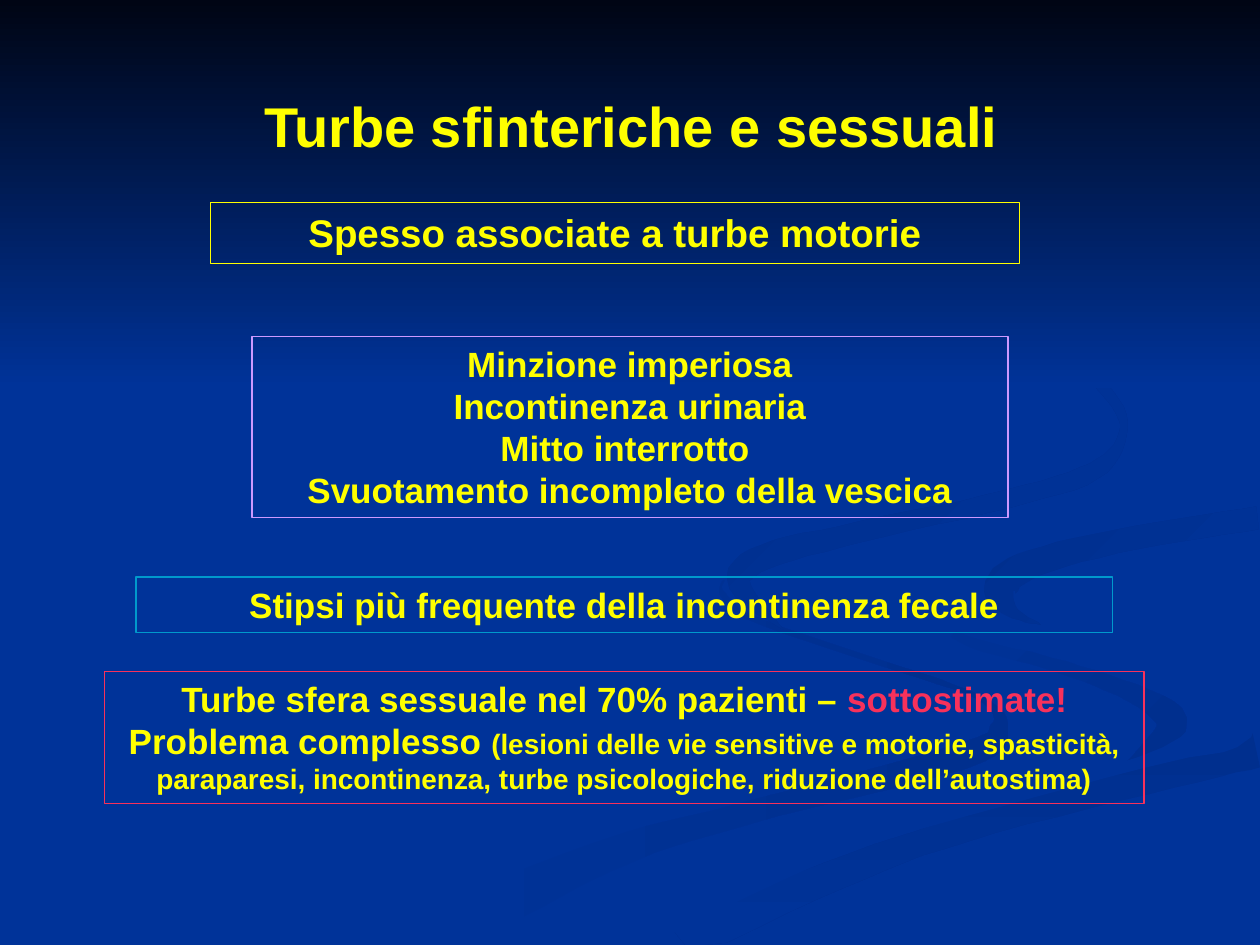
import dataclasses
import math

import pptx
import pptx.dml.color
import pptx.enum.shapes
import pptx.enum.text
import pptx.util

PX = pptx.util.Inches(1) // 100
SLIDE_BOX = (0, 0, 1000, 750)
SKY_HEIGHT = 308
STEPS_PER_KNOT = 6


@dataclasses.dataclass(frozen=True)
class Theme:
    font: str = "Arial"
    blue: str = "003399"
    shade: str = "002F8E"
    night: str = "000514"
    text: str = "FFFF00"
    violet: str = "CC99FF"
    cyan: str = "0099CC"
    red: str = "F7315B"
    title_size: int = 32
    lead_size: int = 22
    body_size: int = 20
    detail_size: int = 16
    line_width: float = 0.75


@dataclasses.dataclass(frozen=True)
class Ribbon:
    start_color: str
    end_color: str
    angle: int
    knots: tuple  # (x, y, thickness) along the centre line


THEME = Theme()

RIBBONS = {
    "left tail": Ribbon(THEME.blue, THEME.shade, 0, (
        (575, 460, 0), (574, 472, 4), (605, 494, 4), (745, 541, 4), (784, 558, 4),
        (793, 578, 14), (764, 600, 20), (587, 647, 18), (479, 680, 26), (330, 749, 45))),
    "right curl": Ribbon(THEME.blue, THEME.shade, 45, (
        (724, 464, 0), (731, 482, 6), (770, 508, 10), (845, 530, 10),
        (907, 554, 16), (930, 577, 24), (894, 605, 0))),
    "lower stroke": Ribbon(THEME.shade, THEME.blue, 90, (
        (998, 595, 28), (910, 619, 22), (765, 658, 20), (664, 694, 24), (537, 749, 34))),
    "main stroke": Ribbon(THEME.blue, THEME.blue, 0, (
        (999, 395, 15), (874, 414, 18), (775, 438, 30), (753, 464, 56), (790, 494, 34),
        (859, 516, 18), (935, 541, 28), (971, 568, 56), (925, 599, 12), (765, 643, 10),
        (652, 678, 12), (490, 749, 26))),
    "right band": Ribbon(THEME.shade, THEME.blue, 45, (
        (998, 411, 18), (900, 427, 18), (820, 447, 22), (794, 466, 26),
        (803, 485, 10), (826, 496, 0))),
    "upper curl": Ribbon(THEME.shade, THEME.blue, 45, (
        (762, 233, 0), (821, 263, 4), (880, 313, 8), (891, 345, 6), (868, 374, 14),
        (800, 396, 14), (683, 422, 16), (607, 442, 20), (587, 464, 18), (622, 500, 0))),
}


def rgb(value):
    return pptx.dml.color.RGBColor.from_string(value)


def spline_value(before, start, end, after, t):
    return 0.5 * (2 * start + (end - before) * t
                  + (2 * before - 5 * start + 4 * end - after) * t ** 2
                  + (3 * start - before - 3 * end + after) * t ** 3)


def smooth(knots):
    padded = (knots[0], *knots, knots[-1])
    samples = []
    for neighbours in zip(padded, padded[1:], padded[2:], padded[3:]):
        for step in range(STEPS_PER_KNOT):
            t = step / STEPS_PER_KNOT
            samples.append(tuple(spline_value(*values, t) for values in zip(*neighbours)))
    return samples + [knots[-1]]


def ribbon_outline(knots, width, height):
    samples = smooth(knots)
    one_edge, other_edge = [], []
    for index, (x, y, thickness) in enumerate(samples):
        previous = samples[max(index - 1, 0)]
        following = samples[min(index + 1, len(samples) - 1)]
        direction = math.atan2(following[1] - previous[1], following[0] - previous[0])
        across = max(thickness, 0) / 2
        for edge, side in ((one_edge, across), (other_edge, -across)):
            edge.append((min(round(x - side * math.sin(direction)), width),
                         min(round(y + side * math.cos(direction)), height)))
    return one_edge + other_edge[::-1]


def paint(fill, start, end, clockwise_angle):
    if start == end:
        fill.solid()
        fill.fore_color.rgb = rgb(start)
        return
    fill.gradient()
    fill.gradient_angle = (360 - clockwise_angle) % 360
    for stop, color, position in zip(fill.gradient_stops, (start, end), (0, 1)):
        stop.color.rgb = rgb(color)
        stop.position = position


def add_outline(slide, box, points, start, end, angle):
    builder = slide.shapes.build_freeform(*points[0], scale=PX)
    builder.add_line_segments(points[1:], close=True)
    shape = builder.convert_to_shape(box[0] * PX, box[1] * PX)
    shape.shadow.inherit = False
    shape.line.fill.background()
    paint(shape.fill, start, end, angle)


def add_backdrop(slide, box):
    width, height = box[2:]
    slide.background.fill.solid()
    slide.background.fill.fore_color.rgb = rgb(THEME.blue)
    for ribbon in RIBBONS.values():
        add_outline(slide, box, ribbon_outline(ribbon.knots, width, height),
                    ribbon.start_color, ribbon.end_color, ribbon.angle)
    sky = [(0, 0), (0, SKY_HEIGHT), (width, SKY_HEIGHT), (width, 0)]
    add_outline(slide, box, sky, THEME.night, THEME.blue, 90)


def write_text(shape, paragraphs):
    frame = shape.text_frame
    frame.word_wrap = True
    frame.vertical_anchor = pptx.enum.text.MSO_ANCHOR.TOP
    frame.auto_size = pptx.enum.text.MSO_AUTO_SIZE.SHAPE_TO_FIT_TEXT
    for index, runs in enumerate(paragraphs):
        paragraph = frame.add_paragraph() if index else frame.paragraphs[0]
        paragraph.alignment = pptx.enum.text.PP_ALIGN.CENTER
        for text, size, color in runs:
            run = paragraph.add_run()
            run.text = text
            run.font.name = THEME.font
            run.font.size = pptx.util.Pt(size)
            run.font.bold = True
            run.font.color.rgb = rgb(color)


def add_title(slide, box, text):
    shape = slide.shapes.add_textbox(*(PX * length for length in box))
    write_text(shape, [[(text, THEME.title_size, THEME.text)]])


def add_framed_text(slide, box, line_color, paragraphs):
    rectangle = pptx.enum.shapes.MSO_SHAPE.RECTANGLE
    shape = slide.shapes.add_shape(rectangle, *(PX * length for length in box))
    shape.shadow.inherit = False
    shape.fill.background()
    shape.line.color.rgb = rgb(line_color)
    shape.line.width = pptx.util.Pt(THEME.line_width)
    write_text(shape, paragraphs)


def styled(text, size=THEME.body_size, color=THEME.text):
    return text, size, color


def main():
    presentation = pptx.Presentation()
    presentation.slide_width, presentation.slide_height = (PX * side for side in SLIDE_BOX[2:])
    slide = presentation.slides.add_slide(presentation.slide_layouts[6])

    add_backdrop(slide, SLIDE_BOX)
    add_title(slide, (51, 68, 900, 63), "Turbe sfinteriche e sessuali")

    bladder_symptoms = ("Minzione imperiosa", "Incontinenza urinaria",
                        "Mitto interrotto ", "Svuotamento incompleto della vescica")
    framed_texts = [
        ((167, 161, 642, 48), THEME.text,
         [[styled("Spesso associate a turbe motorie", THEME.lead_size)]]),
        ((200, 267, 600, 144), THEME.violet,
         [[styled(symptom)] for symptom in bladder_symptoms]),
        ((108, 458, 775, 44), THEME.cyan,
         [[styled("Stipsi più frequente della incontinenza fecale")]]),
        ((83, 533, 825, 105), THEME.red,
         [[styled("Turbe sfera sessuale nel 70% pazienti – "),
           styled("sottostimate!", color=THEME.red)],
          [styled("Problema complesso "),
           styled("(lesioni delle vie sensitive e motorie, spasticità, paraparesi, "
                  "incontinenza, turbe psicologiche, riduzione dell’autostima)",
                  THEME.detail_size)]]),
    ]
    for box, line_color, paragraphs in framed_texts:
        add_framed_text(slide, box, line_color, paragraphs)
    presentation.save("out.pptx")


if __name__ == "__main__":
    main()
